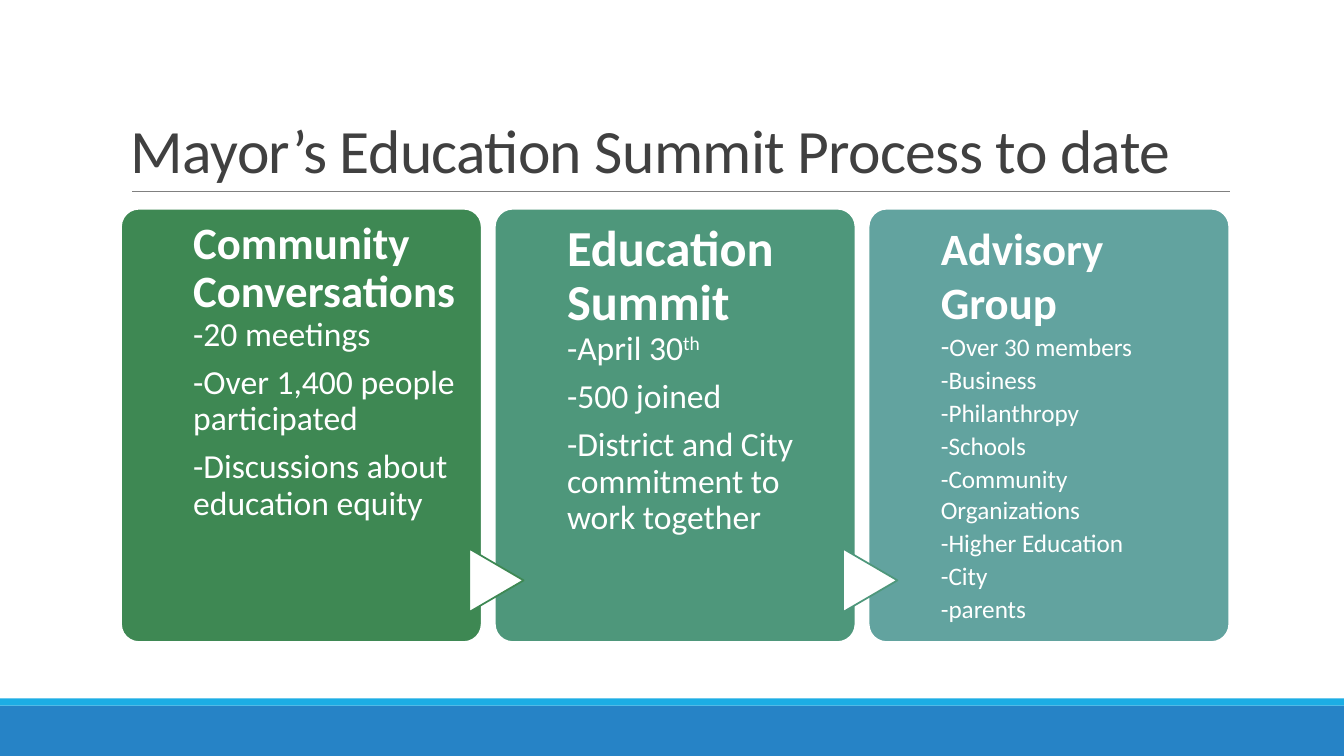
from lxml.etree import SubElement
from pptx import Presentation
from pptx.dml.color import RGBColor
from pptx.enum.shapes import MSO_CONNECTOR, MSO_SHAPE
from pptx.enum.text import MSO_ANCHOR, PP_ALIGN
from pptx.oxml.ns import qn
from pptx.util import Cm, Pt

TITLE = "Mayor’s Education Summit Process to date"
STAGES = [
    dict(color="green", inset=0.3, heading=["Community Conversations"], heading_size=32,
         spacing=0.9, after=8.4, size=24,
         points=["-20 meetings", "-Over 1,400 people participated",
                 "-Discussions about education equity"]),
    dict(color="jade", inset=0.36, heading=["Education Summit"], heading_size=36,
         spacing=0.9, after=8.4, size=24,
         points=[[("-April 30", {}), ("th", {"baseline": 30000})], "-500 joined",
                 "-District and City commitment to work together"]),
    dict(color="teal", inset=0.3, heading=["Advisory", "Group"], heading_size=32,
         spacing=1.0, after=2, size=18,
         points=[[("-", {"size": 20}), ("Over 30 members", {})], "-Business",
                 "-Philanthropy", "-Schools", "-Community Organizations",
                 "-Higher Education", "-City", "-parents"]),
]
COLORS = {"green": "3E8853", "jade": "4E977B", "teal": "62A39F", "white": "FFFFFF",
          "title": "404040", "rule": "808080", "band": "2683C6", "stripe": "1CADE4"}
FONT = "Calibri"

SLIDE_W, SLIDE_H = 33.87, 19.05
LEFT, CARD_TOP, CARD_W, CARD_H, CARD_STEP = 3.05, 5.26, 9.09, 10.92, 9.42
TEXT_OFFSET, TEXT_W = 1.82, 6.78
ARROW_OFFSET, ARROW_TOP, ARROW_W, ARROW_H = -0.76, 13.94, 1.6, 1.37


def rgb(name):
    return RGBColor.from_string(COLORS[name])


def write(paragraph, content, size, color="white", bold=False, spacing=1.0, after=0, track=0):
    paragraph.alignment = PP_ALIGN.LEFT
    paragraph.line_spacing = spacing
    paragraph.space_before = Pt(0)
    paragraph.space_after = Pt(after)
    pieces = [(content, {})] if isinstance(content, str) else content
    for words, extra in pieces:
        run = paragraph.add_run()
        run.text = words
        run.font.name = FONT
        run.font.size = Pt(extra.get("size", size))
        run.font.bold = bold
        run.font.color.rgb = rgb(color)
        properties = run._r.get_or_add_rPr()
        if track:
            properties.set("spc", str(track))
        if "baseline" in extra:
            properties.set("baseline", str(extra["baseline"]))


def add_block(slide, kind, box, fill, line=None):
    block = slide.shapes.add_shape(kind, *map(Cm, box))
    block.shadow.inherit = False
    block.fill.solid()
    block.fill.fore_color.rgb = rgb(fill)
    if line:
        block.line.color.rgb = rgb(line)
        block.line.width = Pt(1.25)
    else:
        block.line.fill.background()
    return block


def set_frame(frame, anchor, margins):
    frame.word_wrap = True
    frame.vertical_anchor = anchor
    frame.margin_left, frame.margin_top, frame.margin_right, frame.margin_bottom = map(Cm, margins)


def add_stage_text(slide, stage, left):
    frame = slide.shapes.add_textbox(Cm(left), Cm(CARD_TOP), Cm(TEXT_W), Cm(CARD_H)).text_frame
    set_frame(frame, MSO_ANCHOR.TOP, (0, stage["inset"], 0, 0))
    rows = [(text, dict(size=stage["heading_size"], bold=True)) for text in stage["heading"]]
    rows += [(text, dict(size=stage["size"], after=stage["after"])) for text in stage["points"]]
    for index, (text, style) in enumerate(rows):
        paragraph = frame.add_paragraph() if index else frame.paragraphs[0]
        write(paragraph, text, spacing=stage["spacing"], **style)


def main():
    deck = Presentation()
    deck.slide_width, deck.slide_height = Cm(SLIDE_W), Cm(SLIDE_H)
    slide = deck.slides.add_slide(deck.slide_layouts[5])

    add_block(slide, MSO_SHAPE.RECTANGLE, (0, 17.78, SLIDE_W, 1.27), "band")
    add_block(slide, MSO_SHAPE.RECTANGLE, (0, 17.6, SLIDE_W, 0.18), "stripe")
    rule = slide.shapes.add_connector(MSO_CONNECTOR.STRAIGHT, Cm(3.33), Cm(4.82), Cm(31), Cm(4.82))
    rule.line.color.rgb = rgb("rule")
    rule.line.width = Pt(0.5)
    SubElement(rule._element.spPr, qn("a:effectLst"))

    title = slide.shapes.title
    title.left, title.top, title.width, title.height = map(Cm, (LEFT, 0.79, 27.94, 4.04))
    set_frame(title.text_frame, MSO_ANCHOR.BOTTOM, (0.25, 0.13, 0.25, 0.13))
    write(title.text_frame.paragraphs[0], TITLE, 44, color="title", spacing=0.85, track=-50)

    for index, stage in enumerate(STAGES):
        left = LEFT + index * CARD_STEP
        card = add_block(slide, MSO_SHAPE.ROUNDED_RECTANGLE, (left, CARD_TOP, CARD_W, CARD_H),
                         stage["color"], "white")
        card.adjustments[0] = 0.05
        if index:
            arrow = add_block(slide, MSO_SHAPE.FLOWCHART_EXTRACT,
                              (left + ARROW_OFFSET, ARROW_TOP, ARROW_W, ARROW_H),
                              "white", STAGES[index - 1]["color"])
            arrow.rotation = 90
        add_stage_text(slide, stage, left + TEXT_OFFSET)

    deck.save("out.pptx")


if __name__ == "__main__":
    main()
